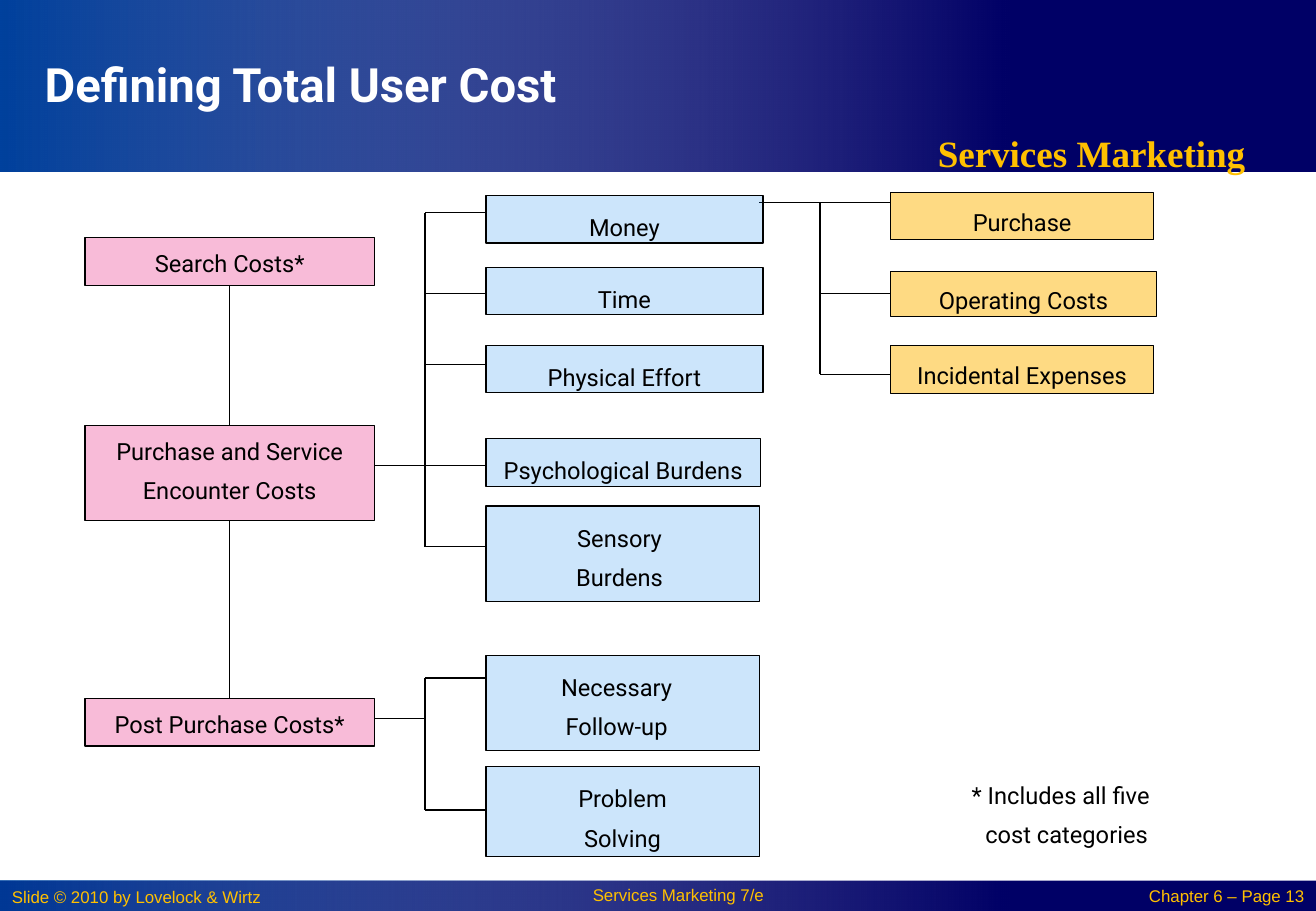
from lxml import etree
from pptx import Presentation
from pptx.dml.color import RGBColor
from pptx.enum.shapes import MSO_CONNECTOR, MSO_SHAPE
from pptx.enum.text import MSO_ANCHOR, PP_ALIGN
from pptx.oxml.ns import qn
from pptx.util import Pt

RECT, STRAIGHT = MSO_SHAPE.RECTANGLE, MSO_CONNECTOR.STRAIGHT
LEFT, CENTER, RIGHT = PP_ALIGN.LEFT, PP_ALIGN.CENTER, PP_ALIGN.RIGHT
TOP, MIDDLE = MSO_ANCHOR.TOP, MSO_ANCHOR.MIDDLE

SLIDE_W, SLIDE_H = 780, 540
BLACK, WHITE, GOLD = "000000", "FFFFFF", "FFC000"
NAVY, BAND_BLUE = "000066", "0152AB"
PINK, BLUE, AMBER = ("EA157A", 29), ("007EEB", 20), ("FED46C", 84)


def rgb(hex_color):
    return RGBColor.from_string(hex_color)


def set_opacity(shape, *percents):
    colors = shape.element.spPr.iter(qn("a:srgbClr"))
    for color, percent in zip(list(colors), percents):
        etree.SubElement(color, qn("a:alpha"), val=str(percent * 1000))


class CostSlide:
    body_font, body_size, spacing = "Roboto", 14, 1.4
    box_line, connector_line = 0.75, 1

    def __init__(self, slide):
        self.shapes = slide.shapes

    def rectangle(self, left, top, width, height):
        shape = self.shapes.add_shape(RECT, Pt(left), Pt(top), Pt(width), Pt(height))
        shape.shadow.inherit = False
        shape.line.fill.background()
        return shape

    def band(self, top, height, opacity):
        """Navy strip with a blue glow fading out to the right."""
        base = self.rectangle(0, top, SLIDE_W, height)
        base.fill.solid()
        base.fill.fore_color.rgb = rgb(NAVY)
        glow = self.rectangle(0, top, 600, height)
        glow.fill.gradient()
        glow.fill.gradient_angle = 0
        for stop, color in zip(glow.fill.gradient_stops, (BAND_BLUE, WHITE)):
            stop.color.rgb = rgb(color)
        set_opacity(glow, opacity, 0)

    def set_text(self, shape, text, size=body_size, font=body_font, color=BLACK,
                 bold=False, align=CENTER, anchor=TOP, spacing=spacing,
                 inset=(7.2, 3.6), nudges=()):
        """A nudge indents a line from the left, or from the right if negative."""
        frame = shape.text_frame
        frame.word_wrap = True
        frame.vertical_anchor = anchor
        frame.margin_left = frame.margin_right = Pt(inset[0])
        frame.margin_top = frame.margin_bottom = Pt(inset[1])
        frame.text = text
        for paragraph in frame.paragraphs:
            paragraph.alignment = align
            paragraph.line_spacing = spacing
            for run in paragraph.runs:
                run.font.size, run.font.name, run.font.bold = Pt(size), font, bold
                run.font.color.rgb = rgb(color)
        for paragraph, nudge in zip(frame.paragraphs, nudges):
            side = "marL" if nudge > 0 else "marR"
            paragraph._p.get_or_add_pPr().set(side, str(Pt(abs(nudge))))

    def label(self, left, top, width, height, text, **style):
        box = self.shapes.add_textbox(Pt(left), Pt(top), Pt(width), Pt(height))
        self.set_text(box, text, **style)

    def cost_box(self, left, top, width, height, tint, text, **style):
        box = self.rectangle(left, top, width, height)
        color, opacity = tint
        box.fill.solid()
        box.fill.fore_color.rgb = rgb(color)
        set_opacity(box, opacity)
        box.line.color.rgb = rgb(BLACK)
        box.line.width = Pt(self.box_line)
        self.set_text(box, text, **style)

    def line(self, x1, y1, x2, y2):
        connector = self.shapes.add_connector(STRAIGHT, Pt(x1), Pt(y1), Pt(x2), Pt(y2))
        connector.line.color.rgb = rgb(BLACK)
        connector.line.width = Pt(self.connector_line)
        etree.SubElement(connector.element.spPr, qn("a:effectLst"))

    def bracket(self, parent_x, parent_y, trunk_x, child_x, child_ys):
        self.line(parent_x, parent_y, trunk_x, parent_y)
        self.line(trunk_x, child_ys[0], trunk_x, child_ys[-1])
        for y in child_ys:
            self.line(trunk_x, y, child_x, y)


def main():
    deck = Presentation()
    deck.slide_width, deck.slide_height = Pt(SLIDE_W), Pt(SLIDE_H)
    page = CostSlide(deck.slides.add_slide(deck.slide_layouts[6]))

    # Header and footer
    page.band(522, 18, 69)
    page.band(0, 102, 80)
    page.label(504, 63.4, 286, 44.6, "Services Marketing", size=22,
               font="Times New Roman", color=GOLD, bold=True)
    page.label(19.4, 2.2, 455, 95, "Defining Total User Cost", size=28, color=WHITE,
               bold=True, align=LEFT, anchor=MIDDLE, spacing=1)
    for left, top, width, text, align, spacing in (
        (0, 522, 186, "Slide © 2010 by Lovelock & Wirtz", LEFT, 1),
        (306, 522, 192, "Services Marketing 7/e", CENTER, 0.9),
        (654, 522.7, 126, "Chapter 6 – Page 13", RIGHT, 0.9),
    ):
        page.label(left, top, width, 18, text, size=10, font="Arial", color=GOLD,
                   align=align, spacing=spacing)

    # Connectors
    page.line(136, 169.2, 136, 252)
    page.line(136, 308.6, 136, 414)
    page.bracket(222, 276, 252, 288, (126, 174, 216, 276, 324))
    page.bracket(222, 426, 252, 288, (402, 480))
    page.bracket(450, 120, 486, 528, (120, 174, 222))

    # Purchase stages
    for top, height, text in (
        (141, 28.2, "Search Costs*"),
        (252, 56.6, "Purchase and Service Encounter Costs"),
        (414, 28.2, "Post Purchase Costs*"),
    ):
        page.cost_box(50.4, top, 171.6, height, PINK, text, inset=(0, 0))

    # Cost categories
    for top, width, height, text, nudges in (
        (115.8, 164.2, 28.2, "Money", ()),
        (158.4, 164.2, 28.2, "Time", ()),
        (204.6, 164.2, 28.2, "Physical Effort", ()),
        (260, 162.8, 28.2, "Psychological Burdens", ()),
        (300, 162, 56.6, "Sensory\nBurdens", (-3.5,)),
        (388.4, 162, 56.6, "Necessary\nFollow-up", (-7,)),
        (454.4, 162, 53.2, "Problem\nSolving", ()),
    ):
        page.cost_box(288, top, width, height, BLUE, text, nudges=nudges)

    # Money costs
    for top, width, height, text in (
        (114, 155.8, 28.2, "Purchase"),
        (160.8, 157.4, 26.8, "Operating Costs"),
        (205, 155.8, 28.2, "Incidental Expenses"),
    ):
        page.cost_box(528, top, width, height, AMBER, text, anchor=MIDDLE, inset=(0, 0))

    # Footnote
    page.label(546, 456, 169, 44.6, "* Includes all five\ncost categories",
               inset=(0, 0), nudges=(-3.5, 7))

    deck.save("out.pptx")


if __name__ == "__main__":
    main()
